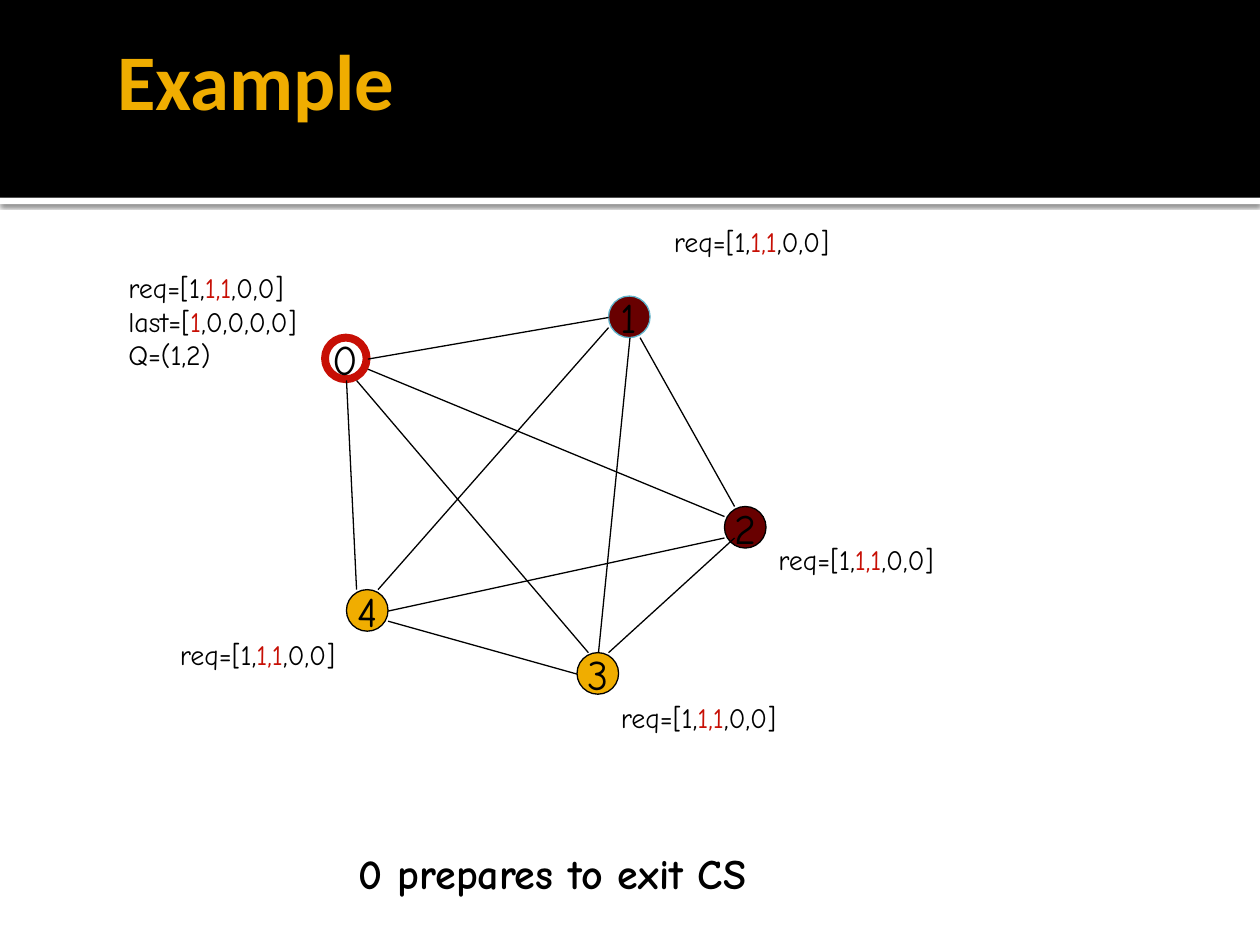
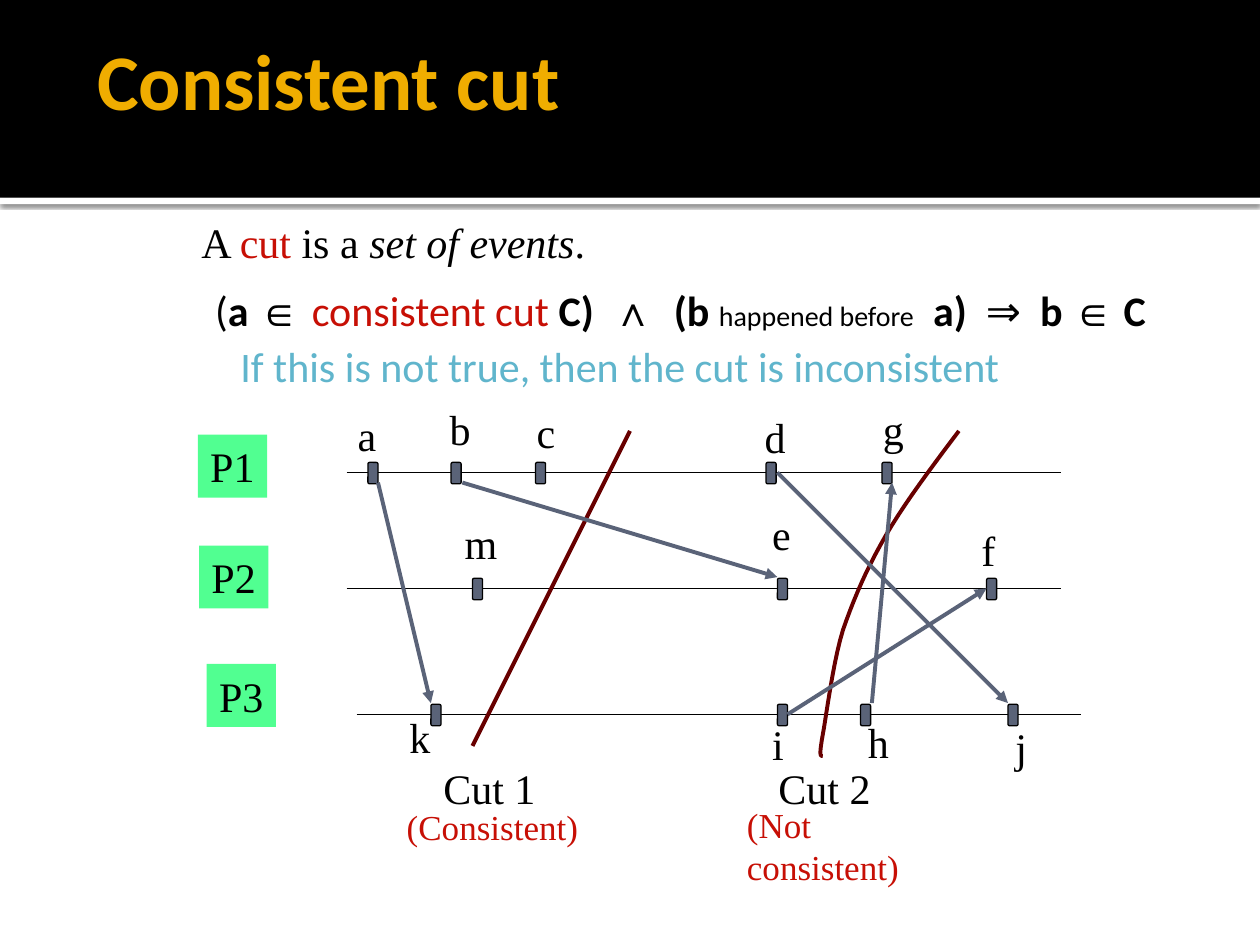
from dataclasses import dataclass

import lxml.etree
import pptx
import pptx.dml.color
import pptx.enum.shapes
import pptx.enum.text
import pptx.oxml.ns
import pptx.util

Inches = pptx.util.Inches
Shapes = pptx.enum.shapes.MSO_SHAPE
Anchor = pptx.enum.text.MSO_ANCHOR
Align = pptx.enum.text.PP_ALIGN
AutoSize = pptx.enum.text.MSO_AUTO_SIZE
qn = pptx.oxml.ns.qn


@dataclass(frozen=True)
class Theme:
    black: str = "000000"
    white: str = "FFFFFF"
    gold: str = "F0AD00"
    red: str = "C70F05"
    maroon: str = "680000"
    sky: str = "60B5CC"
    slate: str = "5A6378"
    green: str = "51FF91"
    heading: str = "Calibri"
    hand: str = "Comic Neue"
    serif: str = "Times New Roman"
    symbol: str = "Arial"
    title_size: int = 45
    text_size: int = 24
    note_size: int = 20
    small_size: int = 16
    thin: float = 0.75
    medium: float = 2.25
    thick: float = 4.5


THEME = Theme()


def rgb(value):
    return pptx.dml.color.RGBColor.from_string(value)


# Text
def write(frame, lines, font, size=THEME.text_size, color=THEME.black, bold=False):
    """Fill a frame; a line is a list of strings or (string, changes) spans."""
    for number, spans in enumerate(lines):
        para = frame.paragraphs[0] if number == 0 else frame.add_paragraph()
        para.alignment = Align.LEFT
        for span in spans:
            text, changes = (span, {}) if isinstance(span, str) else span
            run = para.add_run()
            run.text = text
            run.font.name = changes.get("font", font)
            run.font.size = pptx.util.Pt(changes.get("size", size))
            run.font.bold = changes.get("bold", bold)
            run.font.italic = changes.get("italic", False)
            run.font.color.rgb = rgb(changes.get("color", color))
            if "spacing" in changes:
                run.font._element.set("spc", str(changes["spacing"]))


def add_label(page, left, top, width, height, lines, font, wrap=False, **style):
    box = page.shapes.add_textbox(Inches(left), Inches(top), Inches(width), Inches(height))
    box.text_frame.word_wrap = wrap
    box.text_frame.auto_size = AutoSize.SHAPE_TO_FIT_TEXT
    write(box.text_frame, lines, font, **style)
    return box


# Shapes and lines
def set_outline(shape, color, weight):
    shape.line.color.rgb = rgb(color)
    shape.line.width = pptx.util.Pt(weight)


def add_shape(page, kind, left, top, width, height, fill=None, line=None, weight=THEME.thin):
    shape = page.shapes.add_shape(kind, Inches(left), Inches(top), Inches(width), Inches(height))
    shape.shadow.inherit = False
    if fill:
        shape.fill.solid()
        shape.fill.fore_color.rgb = rgb(fill)
    else:
        shape.fill.background()
    if line:
        set_outline(shape, line, weight)
    else:
        shape.line.fill.background()
    return shape


def add_line(page, start, end, color=THEME.black, weight=THEME.thin, arrow=False):
    line = page.shapes.add_connector(
        pptx.enum.shapes.MSO_CONNECTOR.STRAIGHT, *map(Inches, (*start, *end)))
    set_outline(line, color, weight)
    properties = line.element.spPr
    if arrow:
        lxml.etree.SubElement(properties.find(qn("a:ln")), qn("a:tailEnd"), type="triangle")
    lxml.etree.SubElement(properties, qn("a:effectLst"))


def add_curve(page, start, pieces, color, weight, steps=10):
    """Draw joined cubic curves as one smooth open outline."""
    points, origin = [], start
    for first, second, end in pieces:
        for step in range(1, steps + 1):
            t = step / steps
            points.append(tuple(
                Inches((1 - t) ** 3 * a + 3 * (1 - t) ** 2 * t * b
                       + 3 * (1 - t) * t ** 2 * c + t ** 3 * d)
                for a, b, c, d in zip(origin, first, second, end)))
        origin = end
    builder = page.shapes.build_freeform(Inches(start[0]), Inches(start[1]))
    builder.add_line_segments(points, close=False)
    curve = builder.convert_to_shape()
    curve.shadow.inherit = False
    curve.fill.background()
    set_outline(curve, color, weight)


# Shared page frame
def add_page(deck, title, title_left):
    page = deck.slides.add_slide(deck.slide_layouts[5])
    strip = add_shape(page, Shapes.RECTANGLE, 0, 1.57, 10, 0.05, THEME.white)
    shadow = lxml.etree.SubElement(
        strip.element.spPr.find(qn("a:effectLst")), qn("a:outerShdw"),
        blurRad=str(pptx.util.Pt(2.5)), dist=str(pptx.util.Pt(0.8)), dir="5400000")
    color = lxml.etree.SubElement(shadow, qn("a:srgbClr"), val=THEME.black)
    lxml.etree.SubElement(color, qn("a:alpha"), val="60000")
    add_shape(page, Shapes.RECTANGLE, 0, 0, 10, 1.57, THEME.black)

    heading = page.shapes.title
    page.shapes._spTree.append(heading.element)  # bring in front of the band
    heading.left, heading.top = Inches(title_left), Inches(0)
    heading.width, heading.height = Inches(8.5), Inches(1.25)
    frame = heading.text_frame
    frame.vertical_anchor = Anchor.MIDDLE
    frame.auto_size = AutoSize.NONE
    frame.margin_left = Inches(0.1)
    frame.margin_top = frame.margin_right = frame.margin_bottom = Inches(0.05)
    write(frame, [[title]], THEME.heading, size=THEME.title_size, color=THEME.gold, bold=True)
    return page


# Token exchange between five processes
def add_node(page, name, left, top, fill, line, weight=THEME.thin):
    node = add_shape(page, Shapes.OVAL, left, top, 0.33, 0.33, fill, line, weight)
    node.text_frame.word_wrap = False
    node.text_frame.vertical_anchor = Anchor.MIDDLE
    write(node.text_frame, [[name]], THEME.hand)
    node.text_frame.paragraphs[0].alignment = Align.CENTER


def build_example(deck):
    page = add_page(deck, "Example", 0.83)
    add_node(page, "0", 2.58, 2.68, None, THEME.red, THEME.thick)
    for name, left, top, fill, line in (
            ("2", 5.75, 4.02, THEME.maroon, THEME.black),
            ("1", 4.83, 2.35, THEME.maroon, THEME.sky),
            ("3", 4.58, 5.18, THEME.gold, THEME.black),
            ("4", 2.75, 4.68, THEME.gold, THEME.black)):
        add_node(page, name, left, top, fill, line)

    for start, end in (
            ((2.92, 2.85), (4.83, 2.52)), ((5.08, 2.68), (5.83, 4.02)),
            ((5.83, 4.27), (4.83, 5.18)), ((4.58, 5.35), (3.08, 4.93)),
            ((2.83, 4.68), (2.75, 3.02)), ((2.92, 2.93), (5.75, 4.1)),
            ((2.83, 3.02), (4.67, 5.18)), ((5, 2.68), (4.75, 5.18)),
            ((4.83, 2.6), (3, 4.68)), ((5.75, 4.27), (3.08, 4.85))):
        add_line(page, start, end)

    red = {"color": THEME.red}
    request = ["req=[1,", ("1,1", red), ",0,0]"]
    holder = [request, ["last=[", ("1", red), ",0,0,0,0]"], ["Q=(1,2)"]]
    add_label(page, 0.92, 2.1, 1.76, 1.03, holder, THEME.hand, size=THEME.small_size)
    for left, top in ((5.25, 1.73), (6.08, 4.26), (4.83, 5.51), (1.33, 5.01)):
        add_label(page, left, top, 1.64, 0.41, [request], THEME.hand, size=THEME.small_size)
    add_label(page, 2.75, 6.68, 4.42, 0.57, [["0 prepares to exit CS"]], THEME.hand,
              wrap=True, bold=True)


# Cuts through three process timelines
def add_definition(page):
    red, bold = {"color": THEME.red}, {"bold": True}
    symbol = {"font": THEME.symbol}
    gap = (" ", {"spacing": 540})
    formula = ["(", ("a ", bold), ("∈ ", symbol), ("consistent cut ", red), ("C)", bold), gap,
               ("∧", symbol | bold), gap, ("(b ", bold),
               ("happened before", {"size": THEME.small_size}), gap, ("a)", bold), gap,
               "⇒", gap, ("b ", bold), ("∈", symbol | bold), (" C", bold)]
    remark = [("If this is not true, then the cut is inconsistent", {"color": THEME.sky})]
    box = add_label(page, 1.33, 2.21, 8.37, 0.95, [formula, remark], THEME.heading, wrap=True)
    for para, indent in zip(box.text_frame.paragraphs, (0.28, 0.48)):
        para._p.get_or_add_pPr().set("marL", str(Inches(indent)))
    box.text_frame.paragraphs[1].space_before = pptx.util.Pt(3)
    add_label(page, 1.5, 1.67, 3.27, 0.5,
              [["A ", ("cut", red), " is a ", ("set of events", {"italic": True}), "."]],
              THEME.serif)


def build_consistent_cut(deck):
    page = add_page(deck, "Consistent cut", 0.67)
    add_definition(page)

    # Timelines: name, box left and top, line y, line ends, event positions
    timelines = (
        ("P1", 1.57, 3.45, 3.75, 2.75, 8.42, (2.92, 3.58, 4.25, 6.08, 7)),
        ("P2", 1.58, 4.33, 4.67, 2.75, 8.42, (3.75, 6.17, 7.83)),
        ("P3", 1.64, 5.27, 5.67, 2.83, 8.58, (3.42, 6.17, 6.83, 8)))
    for name, left, top, y, start, end, events in timelines:
        add_line(page, (start, y), (end, y))
        for x in events:
            add_shape(page, Shapes.ROUNDED_RECTANGLE, x, y - 0.08, 0.08, 0.17,
                      THEME.slate, THEME.black)
        process = add_shape(page, Shapes.RECTANGLE, left, top, 0.55, 0.5, THEME.green)
        process.text_frame.word_wrap = False
        write(process.text_frame, [[name]], THEME.serif)

    # Cuts
    add_line(page, (5, 3.42), (3.75, 5.92), THEME.maroon, THEME.medium)
    add_curve(page, (7.61, 3.42), (
        ((7.4, 3.7), (7.18, 3.99), (7.03, 4.25)),
        ((6.88, 4.51), (6.78, 4.74), (6.69, 5)),
        ((6.61, 5.26), (6.56, 5.67), (6.53, 5.83)),
        ((6.5, 6), (6.51, 6), (6.53, 6))), THEME.maroon, THEME.medium)

    # Messages
    for start, end in (
            ((3, 3.83), (3.42, 5.58)), ((3.67, 3.83), (6.17, 4.58)),
            ((6.17, 3.75), (8, 5.58)), ((6.92, 5.58), (7.08, 3.83)),
            ((6.25, 5.67), (7.83, 4.67))):
        add_line(page, start, end, THEME.slate, THEME.medium, arrow=True)

    # Event and cut names
    for name, left, top, width in (
            ("a", 2.74, 3.2, 0.35), ("b", 3.47, 3.15, 0.37), ("c", 4.16, 3.18, 0.35),
            ("d", 5.97, 3.22, 0.37), ("g", 6.91, 3.15, 0.37), ("m", 3.59, 4.06, 0.46),
            ("e", 6.03, 3.99, 0.35), ("f", 7.69, 4.11, 0.31), ("k", 3.15, 5.6, 0.37),
            ("i", 6.03, 5.65, 0.29), ("h", 6.79, 5.64, 0.37), ("j", 7.96, 5.68, 0.29),
            ("Cut 1", 3.42, 6, 0.93), ("Cut 2", 6.08, 6, 0.93)):
        add_label(page, left, top, width, 0.5, [[name]], THEME.serif)
    for verdict, left, top, width in (
            ("(Not consistent)", 5.83, 6.33, 1.98), ("(Consistent)", 3.13, 6.34, 1.56)):
        add_label(page, left, top, width, 0.43, [[verdict]], THEME.serif,
                  size=THEME.note_size, color=THEME.red)


def main():
    deck = pptx.Presentation()
    deck.slide_width, deck.slide_height = Inches(10), Inches(7.5)
    build_example(deck)
    build_consistent_cut(deck)
    deck.save("out.pptx")


if __name__ == "__main__":
    main()
